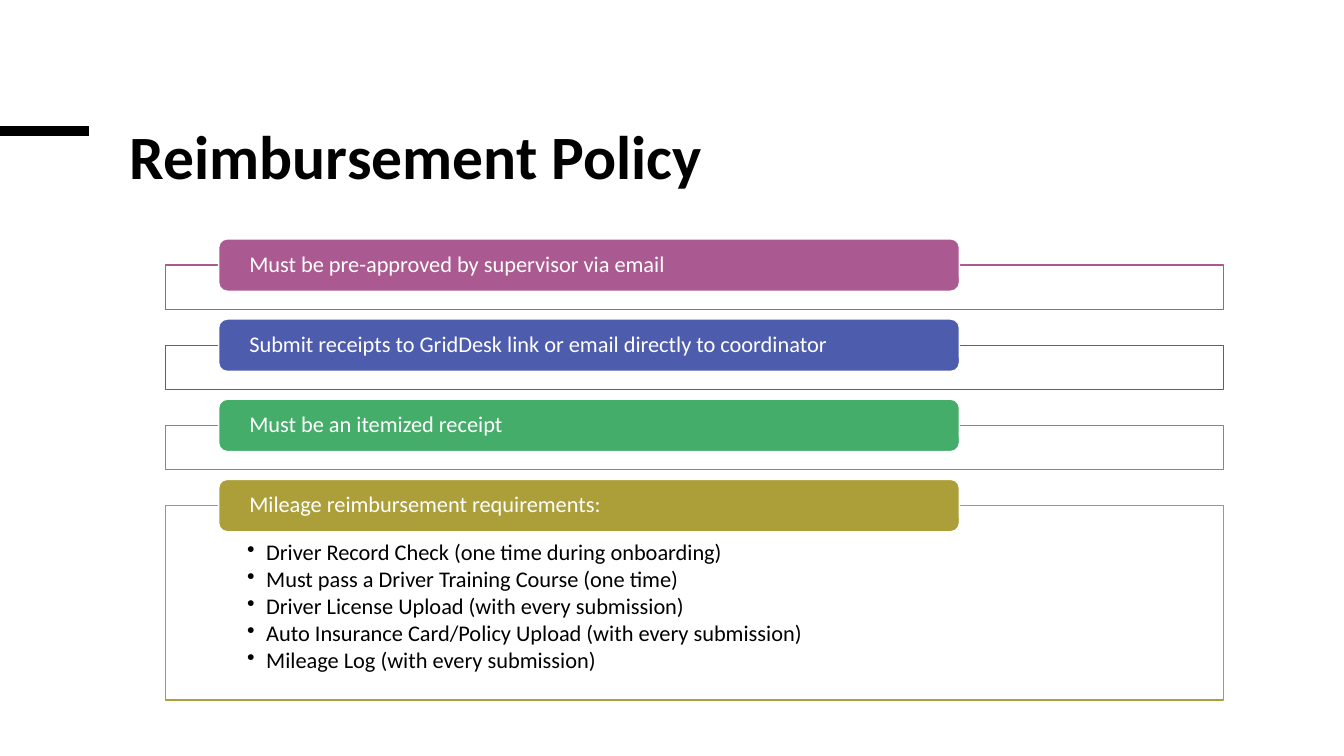
"""Build the reimbursement policy slide: a title above four tabbed rule boxes."""
from dataclasses import dataclass

from lxml import etree
from pptx import Presentation
from pptx.dml.color import RGBColor
from pptx.enum.shapes import MSO_CONNECTOR, MSO_SHAPE
from pptx.enum.text import MSO_ANCHOR, MSO_AUTO_SIZE, PP_ALIGN
from pptx.oxml.ns import qn
from pptx.util import Cm, Pt

STRAIGHT = MSO_CONNECTOR.STRAIGHT
RECTANGLE, ROUNDED = MSO_SHAPE.RECTANGLE, MSO_SHAPE.ROUNDED_RECTANGLE
LEFT = PP_ALIGN.LEFT
TOP, MIDDLE = MSO_ANCHOR.TOP, MSO_ANCHOR.MIDDLE
NO_AUTOFIT = MSO_AUTO_SIZE.NONE


@dataclass(frozen=True)
class Theme:
    font: str = "Calibri"
    black: RGBColor = RGBColor.from_string("000000")
    white: RGBColor = RGBColor.from_string("FFFFFF")
    plum: RGBColor = RGBColor.from_string("AB5991")
    indigo: RGBColor = RGBColor.from_string("4D5CAD")
    green: RGBColor = RGBColor.from_string("43AD69")
    olive: RGBColor = RGBColor.from_string("AC9F39")
    title_size: Pt = Pt(44)
    body_size: Pt = Pt(16)
    outline: Pt = Pt(1)
    accent_line: Pt = Pt(6.75)


THEME = Theme()


def add_box(kind, left, top, width, height, fill, line):
    box = slide.shapes.add_shape(kind, Cm(left), Cm(top), Cm(width), Cm(height))
    box.shadow.inherit = False
    box.fill.solid()
    box.fill.fore_color.rgb = fill
    box.line.color.rgb = line
    box.line.width = THEME.outline
    return box


def style_text(frame, size, color, spacing, bold=False):
    for paragraph in frame.paragraphs:
        paragraph.alignment = LEFT
        paragraph.line_spacing = spacing
        for run in paragraph.runs:
            run.font.name = THEME.font
            run.font.size = size
            run.font.color.rgb = color
            run.font.bold = bold


policy_rules = [
    ("Must be pre-approved by supervisor via email", THEME.plum, []),
    ("Submit receipts to GridDesk link or email directly to coordinator", THEME.indigo, []),
    ("Must be an itemized receipt", THEME.green, []),
    ("Mileage reimbursement requirements:", THEME.olive, [
        "Driver Record Check (one time during onboarding)",
        "Must pass a Driver Training Course (one time)",
        "Driver License Upload (with every submission)",
        "Auto Insurance Card/Policy Upload (with every submission)",
        "Mileage Log (with every submission)",
    ]),
]

presentation = Presentation()
presentation.slide_width, presentation.slide_height = Cm(33.87), Cm(19.05)
slide = presentation.slides.add_slide(presentation.slide_layouts[5])

accent = slide.shapes.add_connector(STRAIGHT, Cm(0), Cm(3.3), Cm(2.24), Cm(3.3))
accent.line.color.rgb = THEME.black
accent.line.width = THEME.accent_line
etree.SubElement(accent._element.spPr, qn("a:effectLst"))

title = slide.shapes.title
title.left, title.top, title.width, title.height = Cm(3.02), Cm(3.02), Cm(24), Cm(2.08)
title.text_frame.text = "Reimbursement Policy"
title.text_frame.auto_size = NO_AUTOFIT
title.text_frame.vertical_anchor = MIDDLE
style_text(title.text_frame, THEME.title_size, THEME.black, 0.85, bold=True)

first_top, pitch = 6.02, 2.02
tab_height = 1.32

for index, (rule, color, requirements) in enumerate(policy_rules):
    tab_top = first_top + index * pitch
    frame_height = 4.9 if requirements else 1.12
    rule_frame = add_box(RECTANGLE, 4.17, tab_top + tab_height / 2, 26.67, frame_height,
                         THEME.white, color)
    frame_color = rule_frame._element.spPr.find(qn("a:solidFill"))[0]
    etree.SubElement(frame_color, qn("a:alpha"), val="90000")

    if requirements:
        details = rule_frame.text_frame
        details.text = "\n".join(requirements)
        details.word_wrap = True
        details.vertical_anchor = TOP
        details.margin_left = details.margin_right = Cm(2.06)
        details.margin_top, details.margin_bottom = Cm(0.91), Cm(0.3)
        style_text(details, THEME.body_size, THEME.black, 0.9)
        for requirement in details.paragraphs:
            requirement.space_after = Pt(2)
            properties = requirement._p.get_or_add_pPr()
            properties.set("marL", str(Cm(0.48)))
            properties.set("indent", str(-Cm(0.48)))
            etree.SubElement(properties, qn("a:buChar"), char="•")

    rule_tab = add_box(ROUNDED, 5.51, tab_top, 18.67, tab_height, color, THEME.white)
    label = rule_tab.text_frame
    label.text = rule
    label.word_wrap = True
    label.vertical_anchor = MIDDLE
    label.margin_left = label.margin_right = Cm(0.71)
    label.margin_top = label.margin_bottom = Cm(0)
    style_text(label, THEME.body_size, THEME.white, 0.9)

presentation.save("out.pptx")
